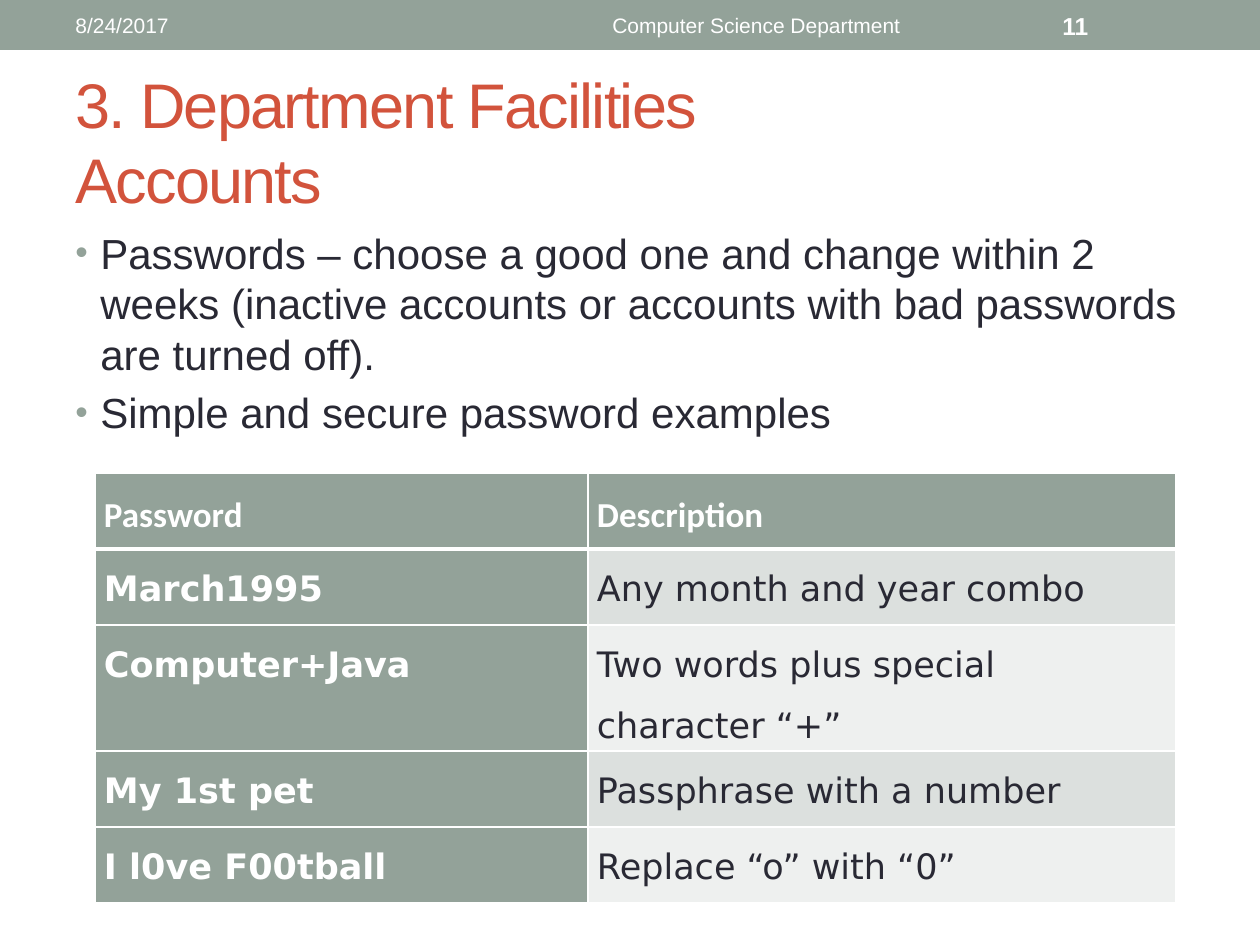
from lxml.etree import SubElement
from pptx import Presentation
from pptx.dml.color import RGBColor
from pptx.enum.shapes import MSO_SHAPE
from pptx.enum.text import MSO_ANCHOR as ANCHOR, PP_ALIGN as ALIGN
from pptx.oxml import parse_xml
from pptx.oxml.ns import nsdecls, qn
from pptx.util import Pt

SAGE, RUST, INK, WHITE = "93A299", "D2533C", "292934", "FFFFFF"
BANDS = ("DCE0DE", "EEF0EF")

HEADER = [
    ("8/24/2017", 63, 399, 12, False, ALIGN.LEFT),
    ("Computer Science Department", 473, 567, 12, False, ALIGN.CENTER),
    ("11", 1050, 147, 14, True, ALIGN.LEFT),
]
TITLE = "3. Department Facilities\vAccounts"
BULLETS = [
    "Passwords – choose a good one and change within 2 weeks "
    "(inactive accounts or accounts with bad passwords are turned off).",
    "Simple and secure password examples",
]
ROWS = [
    ("Password", "Description"),
    ("March1995", "Any month and year combo"),
    ("Computer+Java", "Two words plus special character “+”"),
    ("My 1st pet", "Passphrase with a number"),
    ("I l0ve F00tball", "Replace “o” with “0”"),
]
COL_WIDTHS = (493, 588)
ROW_HEIGHTS = (76, 76, 90, 76, 76)


def px(n):
    return round(n * 914400 / 126)


def rgb(color):
    return RGBColor.from_string(color)


def style(p, size, color, font="Arial", bold=False):
    for r in p.runs:
        r.font.size, r.font.name, r.font.bold = Pt(size), font, bold
        r.font.color.rgb = rgb(color)


def add_text(s, box, lines, size, color, bold=False, anchor=ANCHOR.MIDDLE):
    tf = s.shapes.add_textbox(*map(px, box)).text_frame
    tf.word_wrap, tf.vertical_anchor = True, anchor
    for i, line in enumerate(lines):
        p = tf.add_paragraph() if i else tf.paragraphs[0]
        p.text = line
        style(p, size, color, bold=bold)
    return tf.paragraphs


def add_bullet(p):
    pPr = p._p.get_or_add_pPr()
    pPr.set("marL", str(px(25)))
    pPr.set("indent", str(-px(25)))
    color = SubElement(pPr, qn("a:buClr"))
    SubElement(color, qn("a:srgbClr"), val=SAGE)
    SubElement(pPr, qn("a:buSzPct"), val="85000")
    SubElement(pPr, qn("a:buFont"), typeface="Arial")
    SubElement(pPr, qn("a:buChar"), char="•")


def set_borders(cell, row):
    widths = {"L": 1, "R": 1, "T": 3 if row == 1 else 1, "B": 3 if row == 0 else 1}
    tcPr = cell._tc.get_or_add_tcPr()
    for i, (side, width) in enumerate(widths.items()):
        tcPr.insert(i, parse_xml(
            f'<a:ln{side} {nsdecls("a")} w="{Pt(width)}"><a:solidFill>'
            f'<a:srgbClr val="{WHITE}"/></a:solidFill></a:ln{side}>'))


def fill_cell(cell, text, row, col):
    label = row == 0 or col == 0
    cell.fill.solid()
    cell.fill.fore_color.rgb = rgb(SAGE if label else BANDS[(row - 1) % 2])
    cell.margin_left = cell.margin_right = px(9)
    cell.margin_top = cell.margin_bottom = 0
    p = cell.text_frame.paragraphs[0]
    p.text, p.line_spacing = text, 1.5
    style(p, 20, WHITE if label else INK, "DejaVu Sans" if row else "Calibri", label)
    set_borders(cell, row)


def add_passwords(s):
    box = (95, 473, sum(COL_WIDTHS), sum(ROW_HEIGHTS))
    table = s.shapes.add_table(len(ROWS), len(COL_WIDTHS), *map(px, box)).table
    for column, width in zip(table.columns, COL_WIDTHS):
        column.width = px(width)
    for i, (texts, height) in enumerate(zip(ROWS, ROW_HEIGHTS)):
        table.rows[i].height = px(height)
        for j, text in enumerate(texts):
            fill_cell(table.cell(i, j), text, i, j)


def main():
    """Build the slide on department accounts and passwords."""
    prs = Presentation()
    prs.slide_width, prs.slide_height = px(1260), px(945)
    s = prs.slides.add_slide(prs.slide_layouts[6])

    bar = s.shapes.add_shape(MSO_SHAPE.RECTANGLE, 0, 0, px(1260), px(50))
    bar.shadow.inherit = False
    bar.fill.solid()
    bar.fill.fore_color.rgb = rgb(SAGE)
    bar.line.fill.background()

    for text, left, width, size, bold, align in HEADER:
        add_text(s, (left, 3, width, 45), [text], size, WHITE, bold)[0].alignment = align

    title = add_text(s, (63, 73, 1134, 136), [TITLE], 36, RUST)[0]
    for r in title.runs:
        r.font._element.set("spc", "-100")

    for p in add_text(s, (63, 221, 1134, 672), BULLETS, 24, INK, anchor=ANCHOR.TOP):
        p.space_before = Pt(4.8)
        add_bullet(p)

    add_passwords(s)
    prs.save("out.pptx")


if __name__ == "__main__":
    main()
